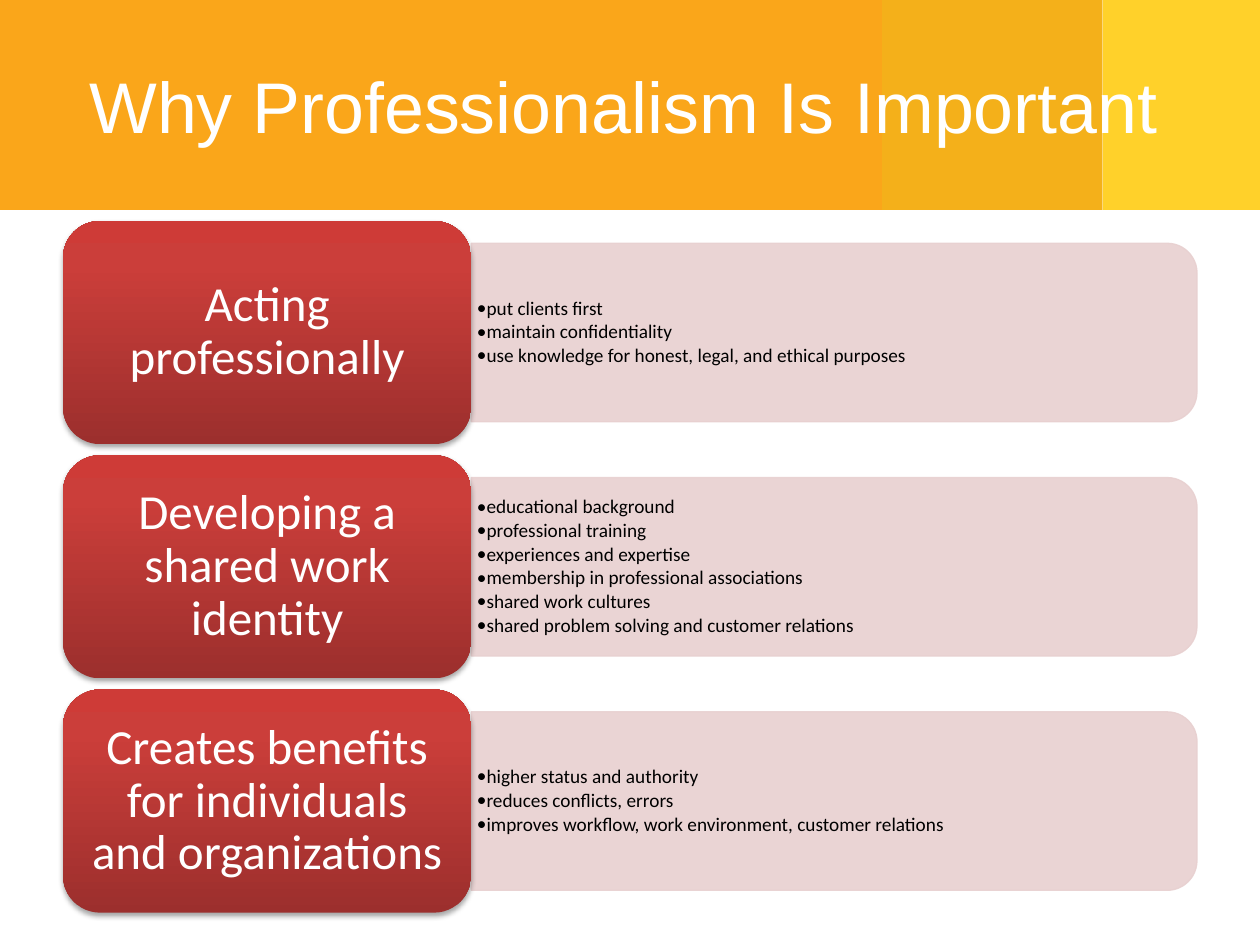
from copy import deepcopy

from lxml import etree
from pptx import Presentation
from pptx import util as u
from pptx.dml import color
from pptx.enum import shapes, text
from pptx.oxml import ns

Pt = u.Pt
BANDS = [(630, 90, "FFD12A"), (504, 126, "F4B01A"), (0, 504, "FAA61A")]
LABEL_STOPS = [(0, "9C2F2D"), (0.8, "CB3E3A"), (1, "CE3B37")]
ROWS = [
    ("Acting professionally", [
        "put clients first",
        "maintain confidentiality",
        "use knowledge for honest, legal, and ethical purposes",
    ]),
    ("Developing a shared work identity", [
        "educational background",
        "professional training",
        "experiences and expertise",
        "membership in professional associations",
        "shared work cultures",
        "shared problem solving and customer relations",
    ]),
    ("Creates benefits for individuals and organizations", [
        "higher status and authority",
        "reduces conflicts, errors",
        "improves workflow, work environment, customer relations",
    ]),
]


def rgb(value):
    return color.RGBColor.from_string(value)


def child(parent, tag, **attributes):
    return etree.SubElement(parent, ns.qn(tag), attributes)


def add_shape(page, kind, left, top, width, height):
    shape = page.shapes.add_shape(kind, Pt(left), Pt(top), Pt(width), Pt(height))
    shape.shadow.inherit = False
    shape.line.fill.background()
    return shape


def add_span(para, words, size, font, shade):
    span = para.add_run()
    span.text = words
    span.font.size = Pt(size)
    span.font.name = font
    span.font.color.rgb = rgb(shade)


def add_text_box(page, left, top, width, height, inset_x, inset_y):
    box = page.shapes.add_textbox(Pt(left), Pt(top), Pt(width), Pt(height))
    frame = box.text_frame
    frame.word_wrap = True
    frame.vertical_anchor = text.MSO_ANCHOR.MIDDLE
    frame.margin_left = frame.margin_right = Pt(inset_x)
    frame.margin_top = frame.margin_bottom = Pt(inset_y)
    return frame


def add_header(page, height):
    for left, width, shade in BANDS:
        band = add_shape(page, shapes.MSO_SHAPE.RECTANGLE, left, 0, width, height)
        band.fill.solid()
        band.fill.fore_color.rgb = rgb(shade)

    title = page.shapes.title
    title.left, title.top, title.width, title.height = Pt(38.4), Pt(18), Pt(648), Pt(84)
    title.element.getparent().append(title.element)
    frame = title.text_frame
    frame.auto_size = text.MSO_AUTO_SIZE.NONE
    frame.vertical_anchor = text.MSO_ANCHOR.MIDDLE
    para = frame.paragraphs[0]
    para.alignment = text.PP_ALIGN.CENTER
    add_span(para, "Why Professionalism Is Important ", 41, "Arial", "FFFFFF")


def add_details(page, left, top, width, height, points):
    panel = add_shape(page, shapes.MSO_SHAPE.ROUND_2_SAME_RECTANGLE,
                      left + (width - height) / 2, top + (height - width) / 2,
                      height, width)
    panel.rotation = 90
    for fill in (panel.fill, panel.line.fill):
        fill.solid()
        fill.fore_color.rgb = rgb("E8D0D0")
    panel.line.width = Pt(0.75)
    for shade in panel.element.spPr.iter(ns.qn("a:srgbClr")):
        child(shade, "a:alpha", val="90000")

    frame = add_text_box(page, left, top + 5, width - 5, height - 10, 3.3, 1.8)
    for index, point in enumerate(points):
        para = frame.add_paragraph() if index else frame.paragraphs[0]
        para.level = 1
        para.line_spacing = 0.9
        properties = para._p.get_or_add_pPr()
        properties.set("marL", str(Pt(4.5)))
        properties.set("indent", str(-Pt(4.5)))
        child(child(properties, "a:spcAft"), "a:spcPct", val="15000")
        child(properties, "a:buFont", typeface="Calibri")
        child(properties, "a:buChar", char="•")
        add_span(para, point, 11, "Calibri", "000000")


def add_label(page, left, top, width, height, words):
    card = add_shape(page, shapes.MSO_SHAPE.ROUNDED_RECTANGLE, left, top, width, height)
    card.fill.gradient()
    card.fill.gradient_angle = 90
    stop_list = card.element.spPr.find(".//" + ns.qn("a:gsLst"))
    stop_list.append(deepcopy(stop_list[-1]))
    for stop, (position, shade) in zip(card.fill.gradient_stops, LABEL_STOPS):
        stop.position = position
        stop.color.rgb = rgb(shade)
    effects = card.element.spPr.find(ns.qn("a:effectLst"))
    shadow = child(effects, "a:outerShdw", blurRad=str(Pt(3.1)), dist=str(Pt(1.8)),
                   dir="5400000", rotWithShape="0")
    child(child(shadow, "a:srgbClr", val="000000"), "a:alpha", val="35000")

    frame = add_text_box(page, left + 6.2, top + 6.2, width - 12.4, height - 12.4, 8.6, 4.3)
    para = frame.paragraphs[0]
    para.alignment = text.PP_ALIGN.CENTER
    para.line_spacing = 0.9
    add_span(para, words, 28, "Calibri", "FFFFFF")


def add_rows(page, left, top, width, row_height):
    label_width = width * 0.36
    for index, (words, points) in enumerate(ROWS):
        row_top = top + index * row_height * 1.05
        add_details(page, left + label_width, row_top + row_height * 0.1,
                    width - label_width, row_height * 0.8, points)
        add_label(page, left, row_top, label_width, row_height, words)


def main():
    deck = Presentation()
    deck.slide_width, deck.slide_height = Pt(720), Pt(540)
    page = deck.slides.add_slide(deck.slide_layouts[5])
    add_header(page, 120)
    add_rows(page, 36, 126.3, 648, 127.5)
    deck.save("out.pptx")


if __name__ == "__main__":
    main()
